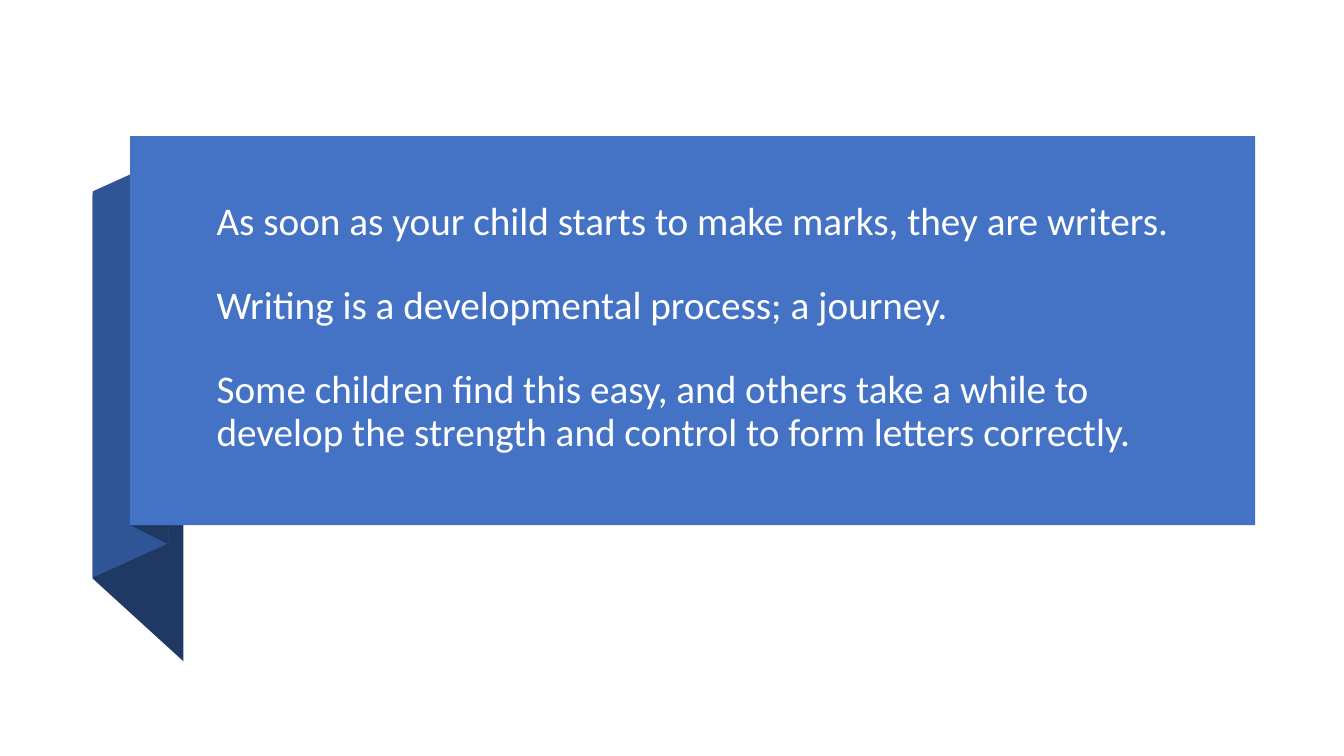
import pptx
import pptx.util
import pptx.dml.color
import pptx.enum.shapes
import pptx.enum.text

MESSAGES = [
    "As soon as your child starts to make marks, they are writers.",
    "Writing is a developmental process; a journey.",
    "Some children find this easy, and others take a while to "
    "develop the strength and control to form letters correctly.",
]

THEME = {
    "panel": "4472C4",
    "side": "2F5597",
    "shade": "203864",
    "text": "FFFFFF",
    "font": "Calibri",
    "size": 28,
    "gap": 30,
    "line": 0.9,
}

WIDTH = pptx.util.Inches(13.33)
HEIGHT = pptx.util.Inches(7.5)

OUTER, PANEL_LEFT, INNER, TAIL = 6.9, 9.68, 12.53, 13.65
PANEL_TOP, PANEL_BOTTOM = 18, 69.47
PANEL = (PANEL_LEFT, PANEL_TOP, 83.72, PANEL_BOTTOM - PANEL_TOP)
MESSAGE_BOX = (15.38, 23.47, 75.77, PANEL_BOTTOM - 23.47)

# fmt: off
FOLDS = [
    ("shade", (OUTER, 25.73, 76.53), (TAIL, 36.8, 87.47)),
    ("side", (OUTER, 25.33, 76.4), (INNER, 20.8, 71.87)),
    ("shade", (PANEL_LEFT, 18.13, PANEL_BOTTOM), (INNER, 20.67, 72)),
]
# fmt: on


def across(share):
    return round(WIDTH * share / 100)


def down(share):
    return round(HEIGHT * share / 100)


def place(box):
    left, top, width, height = box
    return across(left), down(top), across(width), down(height)


def color(name):
    return pptx.dml.color.RGBColor.from_string(THEME[name])


def paint(shape, name):
    shape.shadow.inherit = False
    shape.fill.solid()
    shape.fill.fore_color.rgb = color(name)
    shape.line.fill.background()


def add_fold(slide, name, left_edge, right_edge):
    left, left_top, left_bottom = left_edge
    right, right_top, right_bottom = right_edge
    corners = [(left, left_bottom), (right, right_bottom), (right, right_top), (left, left_top)]
    points = [(across(x), down(y)) for x, y in corners]
    builder = slide.shapes.build_freeform(*points[0])
    builder.add_line_segments(points[1:], close=True)
    paint(builder.convert_to_shape(), name)


def add_messages(slide):
    text_frame = slide.shapes.add_textbox(*place(MESSAGE_BOX)).text_frame
    text_frame.word_wrap = True
    text_frame.vertical_anchor = pptx.enum.text.MSO_ANCHOR.BOTTOM
    text_frame.margin_bottom = pptx.util.Inches(0.7)
    text_frame.text = "\n".join(MESSAGES)
    for index, paragraph in enumerate(text_frame.paragraphs):
        paragraph.line_spacing = THEME["line"]
        paragraph.space_before = pptx.util.Pt(THEME["gap"] if index else 0)
        for run in paragraph.runs:
            run.font.name = THEME["font"]
            run.font.size = pptx.util.Pt(THEME["size"])
            run.font.color.rgb = color("text")


def main():
    presentation = pptx.Presentation()
    presentation.slide_width = WIDTH
    presentation.slide_height = HEIGHT
    slide = presentation.slides.add_slide(presentation.slide_layouts[6])
    for fold in FOLDS:
        add_fold(slide, *fold)
    panel = slide.shapes.add_shape(pptx.enum.shapes.MSO_SHAPE.RECTANGLE, *place(PANEL))
    paint(panel, "panel")
    add_messages(slide)
    presentation.save("out.pptx")


if __name__ == "__main__":
    main()
